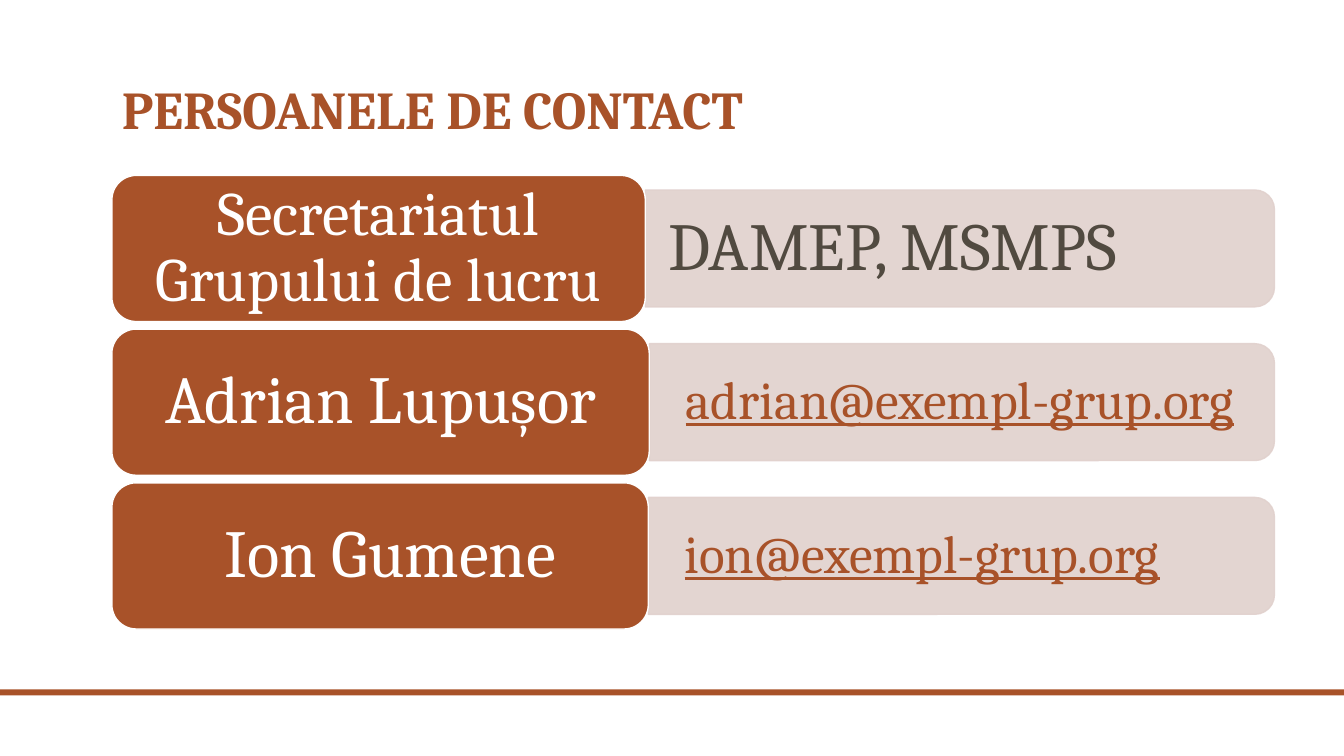
import dataclasses
import lxml.etree
import pptx
import pptx.dml.color
import pptx.enum.shapes
import pptx.enum.text
import pptx.oxml.ns
import pptx.util

Inches = pptx.util.Inches
Kind = pptx.enum.shapes.MSO_SHAPE
Align = pptx.enum.text.PP_ALIGN
Anchor = pptx.enum.text.MSO_ANCHOR

FONT = "Cambria"
COLORS = {"rust": "A85229", "blush": "E1D1CD", "gray": "514A40", "white": "FFFFFF"}
LEFT, RIGHT = 1.11, 12.64
TOP, PITCH = 1.74, 1.525
CARD_H, PANEL_H = 1.45, 1.16
INSET = 0.06


@dataclasses.dataclass
class Style:
    size: int
    color: str
    bold: bool = False
    under: bool = False
    align: Align = Align.LEFT
    anchor: Anchor = Anchor.MIDDLE
    pad: float = 0.1
    indent: float = 0


@dataclasses.dataclass
class Contact:
    name: str
    reach: str
    width: float
    label: Style
    detail: Style


def rgb(name: str) -> pptx.dml.color.RGBColor:
    return pptx.dml.color.RGBColor.from_string(COLORS[name])


def write(shape, text: str, style: Style) -> None:
    frame = shape.text_frame
    frame.word_wrap = True
    frame.vertical_anchor = style.anchor
    frame.margin_left = frame.margin_right = Inches(style.pad)
    frame.margin_top = frame.margin_bottom = Inches(style.pad / 2)
    frame.text = text
    para = frame.paragraphs[0]
    para.alignment = style.align
    para.line_spacing = 0.9
    props = para._p.get_or_add_pPr()
    props.set("marL", str(Inches(style.indent)))
    props.set("indent", "0")
    for run in para.runs:
        font = run.font
        font.name = FONT
        font.size = pptx.util.Pt(style.size)
        font.bold = style.bold
        font.underline = style.under
        font.color.rgb = rgb(style.color)


def add_text(slide, left: float, top: float, width: float, height: float,
             text: str, style: Style) -> None:
    box = slide.shapes.add_textbox(Inches(left), Inches(top), Inches(width), Inches(height))
    write(box, text, style)


def add_block(slide, kind: Kind, left: float, top: float, width: float, height: float,
              fill: str, line: str | None = None):
    shape = slide.shapes.add_shape(
        kind, Inches(left), Inches(top), Inches(width), Inches(height))
    shape.shadow.inherit = False
    shape.fill.solid()
    shape.fill.fore_color.rgb = rgb(fill)
    if line:
        shape.line.color.rgb = rgb(line)
        shape.line.width = pptx.util.Pt(1)
    else:
        shape.line.fill.background()
    return shape


def add_panel(slide, left: float, mid: float) -> None:
    span = RIGHT - left
    panel = add_block(slide, Kind.ROUND_2_SAME_RECTANGLE,
                      (left + RIGHT - PANEL_H) / 2, mid - span / 2,
                      PANEL_H, span, "blush", "blush")
    panel.rotation = 90
    tag = pptx.oxml.ns.qn("a:alpha")
    for color in panel._element.spPr.iter(pptx.oxml.ns.qn("a:srgbClr")):
        lxml.etree.SubElement(color, tag).set("val", "90000")


def add_contact(slide, row: int, contact: Contact) -> None:
    top = TOP + row * PITCH
    mid = top + CARD_H / 2
    edge = LEFT + contact.width
    add_panel(slide, edge, mid)
    add_text(slide, edge, mid - PANEL_H / 2 + INSET, RIGHT - edge - INSET,
             PANEL_H - 2 * INSET, contact.reach, contact.detail)
    card = add_block(slide, Kind.ROUNDED_RECTANGLE, LEFT, top, contact.width, CARD_H,
                     "rust", "white")
    write(card, contact.name, contact.label)


def main() -> None:
    deck = pptx.Presentation()
    deck.slide_width, deck.slide_height = Inches(13.33), Inches(7.5)
    slide = deck.slides.add_slide(deck.slide_layouts[6])

    add_block(slide, Kind.RECTANGLE, 0, 6.84, 13.33, 0.06, "rust")
    add_text(slide, LEFT, 0.64, 11.52, 0.81, "PERSOANELE DE CONTACT",
             Style(38, "rust", bold=True, anchor=Anchor.BOTTOM))

    label = Style(48, "white", align=Align.CENTER, pad=0.2)
    small = dataclasses.replace(label, size=44, pad=0.18)
    shift = dataclasses.replace(label, indent=0.2)
    mail = Style(38, "rust", under=True, pad=0.16, indent=0.2)
    plain = Style(48, "gray", pad=0.23)
    contacts = [
        Contact("Secretariatul Grupului de lucru", "DAMEP, MSMPS", 5.29, small, plain),
        Contact("Adrian Lupușor", "adrian@exempl-grup.org", 5.33, label, mail),
        Contact("Ion Gumene", "ion@exempl-grup.org", 5.32, shift, mail),
    ]
    for row, contact in enumerate(contacts):
        add_contact(slide, row, contact)

    deck.save("out.pptx")


if __name__ == "__main__":
    main()
